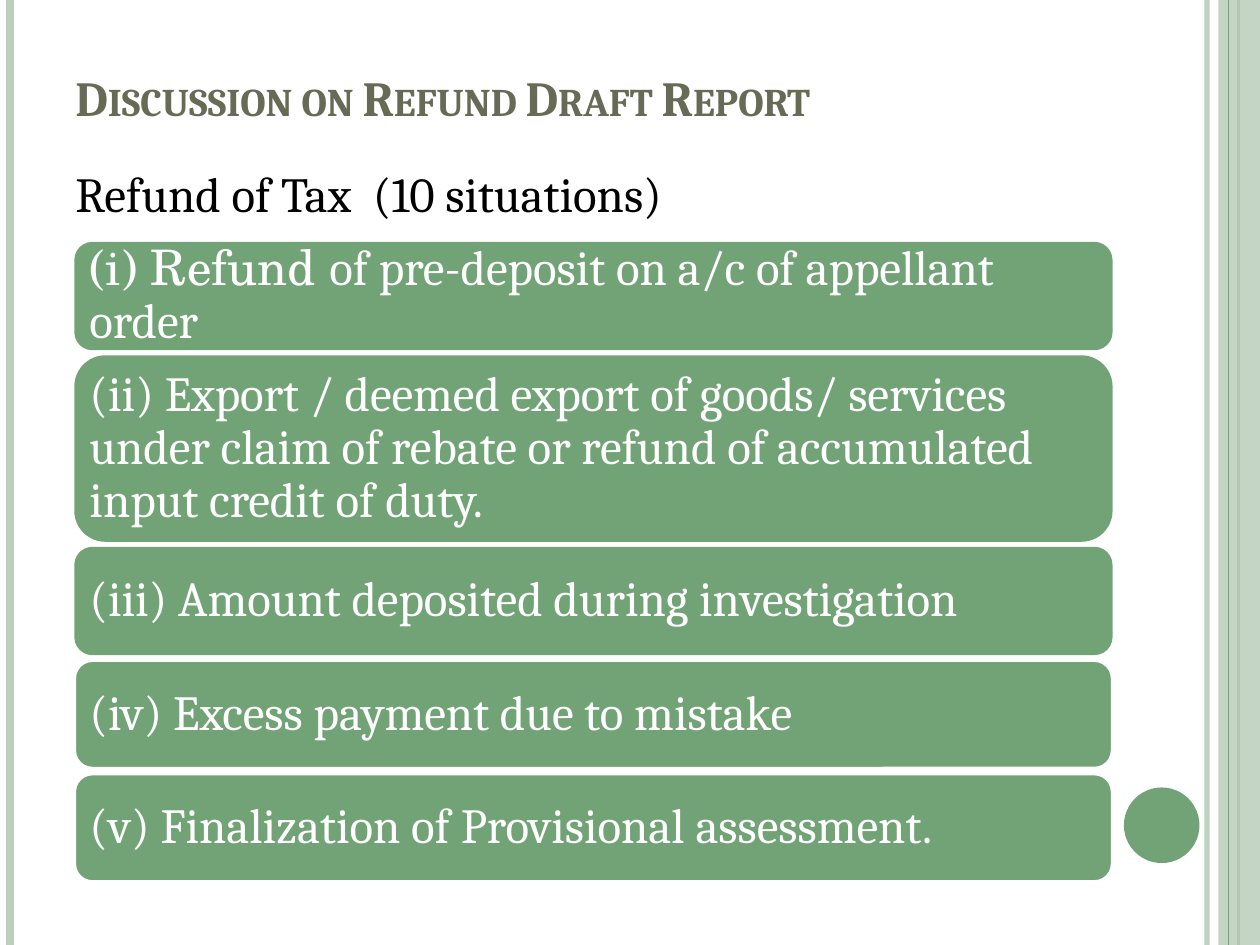
from lxml.etree import SubElement
from pptx import Presentation
from pptx.dml.color import RGBColor
from pptx.enum.shapes import MSO_CONNECTOR as CONN, MSO_SHAPE as SHAPE
from pptx.enum.text import MSO_ANCHOR as ANCHOR, PP_ALIGN as ALIGN
from pptx.oxml.ns import qn
from pptx.util import Inches, Pt

SAGE, GREEN, WHITE, BLACK, OLIVE = "BCCEBD", "72A376", "FFFFFF", "000000", "676A55"
FONT, FONT_ALT = "Cambria", "TeX Gyre Schola"
ROUNDING = 0.1667  # corner radius as a share of the box height

# x, colour, width in points, opacity in percent
BACK_RULES = [(9.58, SAGE, 3, 93), (0.08, SAGE, 4.5, 100), (9.83, GREEN, 1.5, 100)]
FRONT_RULE = (9.75, GREEN, 0.75, 100)

# height, outlined, runs of text and font
SITUATIONS = [
    (0.86, False, [("(i) Refund ", FONT_ALT),
                   ("of pre-deposit on a/c of appellant order", FONT)]),
    (1.48, False, [("(ii) Export / deemed export of goods/ services under claim of "
                    "rebate or refund of accumulated input credit of duty.", FONT)]),
    (0.86, False, [("(iii) Amount deposited during investigation", FONT)]),
    (0.86, True, [("(iv) Excess payment due to mistake", FONT)]),
    (0.86, True, [("(v) Finalization of Provisional assessment.", FONT)]),
]


def paint(fmt, color, opacity=100):
    fmt.solid()
    fmt.fore_color.rgb = RGBColor.from_string(color)
    if opacity < 100:
        clr = fmt._xPr.find(".//" + qn("a:srgbClr"))
        SubElement(clr, qn("a:alpha")).set("val", str(opacity * 1000))


def add_rule(slide, x, color, width, opacity):
    s = slide.shapes.add_connector(CONN.STRAIGHT, Inches(x), 0, Inches(x), Inches(7.5))
    s.line.width = Pt(width)
    paint(s.line.fill, color, opacity)
    SubElement(s._element.spPr, qn("a:effectLst"))


def add_block(slide, kind, box, color, opacity=100, outlined=False):
    s = slide.shapes.add_shape(kind, *map(Inches, box))
    s.shadow.inherit = False
    paint(s.fill, color, opacity)
    if outlined:
        paint(s.line.fill, WHITE)
        s.line.width = Pt(2)
    else:
        s.line.fill.background()
    return s


def add_run(p, text, color, font=FONT, **attrs):
    r = p.add_run()
    r.text = text
    for name, value in dict(size=Pt(28), name=font, **attrs).items():
        setattr(r.font, name, value)
    paint(r.font.fill, color)
    return r


def add_text_shadow(r):
    rPr = r.font._element
    effects = SubElement(rPr, qn("a:effectLst"))
    rPr.find(qn("a:solidFill")).addnext(effects)  # must precede the font
    shadow = SubElement(effects, qn("a:outerShdw"), blurRad="38100", dist="38100",
                        dir="2700000", algn="tl")
    clr = SubElement(shadow, qn("a:srgbClr"), val=BLACK)
    SubElement(clr, qn("a:alpha"), val="43000")


def add_heading(slide, box, text, color, anchor, **attrs):
    tf = slide.shapes.add_textbox(*map(Inches, box)).text_frame
    tf.word_wrap = True
    tf.vertical_anchor = anchor
    r = add_run(tf.paragraphs[0], text, color, **attrs)
    add_text_shadow(r)
    return tf.paragraphs[0], r


def add_situation(slide, top, height, outlined, runs):
    s = add_block(slide, SHAPE.ROUNDED_RECTANGLE, (0.59, top, 8.24, height),
                  GREEN, outlined=outlined)
    s.adjustments[0] = ROUNDING
    tf = s.text_frame
    tf.word_wrap = True
    tf.vertical_anchor = ANCHOR.MIDDLE
    corner = 0.29 * ROUNDING * height  # inset that the rounded corners already give
    for side, inset in dict(left=0.12, right=0.12, top=0.06, bottom=0.06).items():
        setattr(tf, f"margin_{side}", Inches(max(inset - corner, 0)))
    p = tf.paragraphs[0]
    p.alignment = ALIGN.LEFT
    p.line_spacing = 0.9
    for text, font in runs:
        add_run(p, text, WHITE, font)


def main():
    prs = Presentation()
    prs.slide_width, prs.slide_height = Inches(10), Inches(7.5)
    slide = prs.slides.add_slide(prs.slide_layouts[6])

    # Side decoration
    for rule in BACK_RULES:
        add_rule(slide, *rule)
    add_block(slide, SHAPE.RECTANGLE, (9.67, 0, 0.33, 7.5), SAGE, 87)
    add_rule(slide, *FRONT_RULE)
    add_block(slide, SHAPE.OVAL, (8.92, 6.25, 0.6, 0.6), GREEN)

    # Title and subheading
    _, r = add_heading(slide, (0.5, 0.42, 8.17, 0.63), "Discussion on Refund Draft Report",
                       OLIVE, ANCHOR.BOTTOM, bold=True)
    r.font._element.set("cap", "small")
    p, _ = add_heading(slide, (0.5, 1.25, 8.17, 5.83), "Refund of Tax  (10 situations)",
                       BLACK, ANCHOR.TOP)
    p.space_before = Pt(6)

    # Stack of refund situations
    top, gap = 1.92, 0.04
    for height, outlined, runs in SITUATIONS:
        add_situation(slide, top, height, outlined, runs)
        top += height + gap

    prs.save("out.pptx")


if __name__ == "__main__":
    main()
